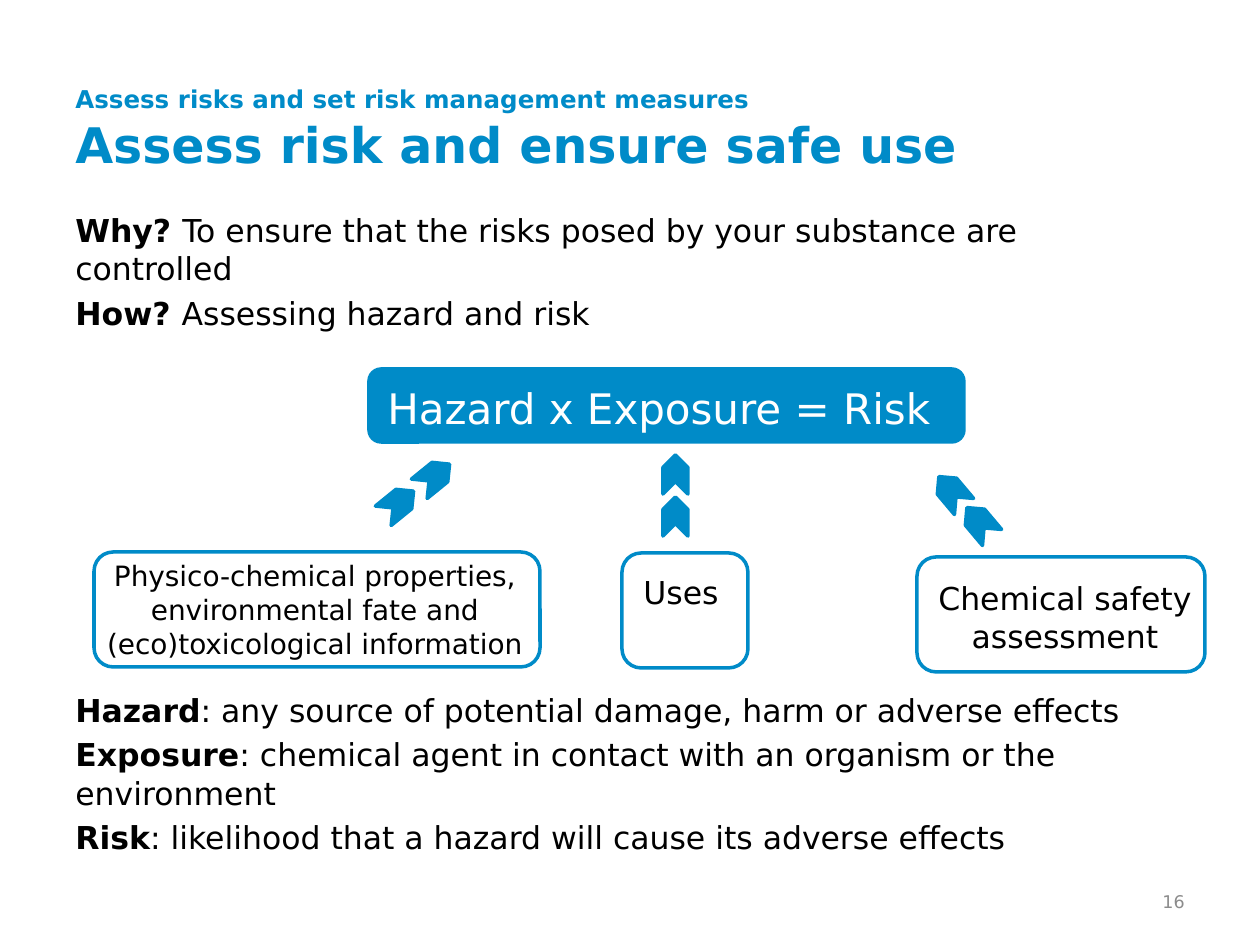
from dataclasses import dataclass

from pptx import Presentation
from pptx.dml.color import RGBColor
from pptx.enum.shapes import MSO_SHAPE
from pptx.enum.text import MSO_ANCHOR, PP_ALIGN
from pptx.util import Emu, Pt

ROUNDED = MSO_SHAPE.ROUNDED_RECTANGLE
CHEVRON = MSO_SHAPE.CHEVRON
LEFT, CENTER, RIGHT = PP_ALIGN.LEFT, PP_ALIGN.CENTER, PP_ALIGN.RIGHT
TOP, MIDDLE = MSO_ANCHOR.TOP, MSO_ANCHOR.MIDDLE
EMU_PER_PX = 914400 / 126


@dataclass(frozen=True)
class Theme:
    font: str = "DejaVu Sans"
    accent: str = "008BC8"
    ink: str = "000000"
    light: str = "FFFFFF"
    muted: str = "8C8C8C"
    title: int = 28
    formula: int = 24
    body: int = 18
    label: int = 16
    kicker: int = 14
    footer: int = 10
    outline: int = 2
    line_height: float = 1.215
    paragraph_gap: float = 3.6


def px(value):
    return Emu(round(value * EMU_PER_PX))


class SlideBuilder:
    def __init__(self, theme, width, height):
        self.theme = theme
        self.deck = Presentation()
        self.deck.slide_width, self.deck.slide_height = px(width), px(height)
        self.page = self.deck.slides.add_slide(self.deck.slide_layouts[6])

    def text(self, area, paragraphs, color, align=LEFT, anchor=TOP, gap=0):
        box = self.page.shapes.add_textbox(*map(px, area))
        frame = box.text_frame
        frame.word_wrap = True
        frame.vertical_anchor = anchor
        for index, (size, spans) in enumerate(paragraphs):
            para = frame.paragraphs[0] if index == 0 else frame.add_paragraph()
            layout = {
                "alignment": align,
                "line_spacing": Pt(size * self.theme.line_height),
                "space_before": Pt(gap if index else 0),
            }
            for name, value in layout.items():
                setattr(para, name, value)
            for content, bold in spans:
                span = para.add_run()
                span.text = content
                style = {"name": self.theme.font, "size": Pt(size), "bold": bold}
                for name, value in style.items():
                    setattr(span.font, name, value)
                span.font.color.rgb = RGBColor.from_string(color)

    def definitions(self, area, entries):
        size = self.theme.body
        paragraphs = [(size, [(term, True), (meaning, False)]) for term, meaning in entries]
        self.text(area, paragraphs, self.theme.ink, gap=self.theme.paragraph_gap)

    def label(self, area, lines, size, color):
        self.text(area, [(size, [(line, False)]) for line in lines], color, CENTER)

    def shape(self, kind, area, filled=True, rotation=0):
        shape = self.page.shapes.add_shape(kind, *map(px, area))
        accent = RGBColor.from_string(self.theme.accent)
        shape.shadow.inherit = False
        shape.rotation = rotation
        if filled:
            shape.fill.solid()
            shape.fill.fore_color.rgb = accent
        else:
            shape.fill.background()
        shape.line.color.rgb = accent
        shape.line.width = Pt(self.theme.outline)


def main():
    theme = Theme()
    slide = SlideBuilder(theme, 1260, 945)

    slide.text(
        (63, 78, 1134, 102),
        [
            (theme.kicker, [("Assess risks and set risk management measures", True)]),
            (theme.title, [("Assess risk and ensure safe use", True)]),
        ],
        theme.accent,
    )
    slide.definitions((63, 204, 1120, 140), [
        ("Why? ", "To ensure that the risks posed by your substance are controlled"),
        ("How? ", "Assessing hazard and risk"),
    ])
    slide.definitions((63, 684, 1120, 180), [
        ("Hazard", ": any source of potential damage, harm or adverse effects"),
        ("Exposure", ": chemical agent in contact with an organism or the environment"),
        ("Risk", ": likelihood that a hazard will cause its adverse effects"),
    ])

    slide.shape(ROUNDED, (369, 369, 595, 73))
    slide.label((369, 376, 580, 63), ["Hazard x Exposure = Risk"], theme.formula, theme.light)

    inputs = [
        ((94, 552, 446, 115), (72, 552, 486, 115), theme.label,
         ["Physico-chemical properties, environmental fate and", "(eco)toxicological information"]),
        ((622, 553, 126, 115), (508, 566, 346, 50), theme.body, ["Uses"]),
        ((917, 557, 288, 115), (884, 572, 362, 90), theme.body, ["Chemical safety", "assessment"]),
    ]
    for frame_area, text_area, size, lines in inputs:
        slide.shape(ROUNDED, frame_area, filled=False)
        slide.label(text_area, lines, size, theme.ink)

    arrows = [
        (320.9, [(415, 464), (379, 491)]),
        (270, [(656, 462), (656, 504)]),
        (229.9, [(932, 479), (960, 510)]),
    ]
    for rotation, corners in arrows:
        for left, top in corners:
            slide.shape(CHEVRON, (left, top, 39, 25), rotation=rotation)

    slide.text((903, 876, 294, 50), [(theme.footer, [("16", False)])], theme.muted, RIGHT, MIDDLE)
    slide.deck.save("out.pptx")


if __name__ == "__main__":
    main()
